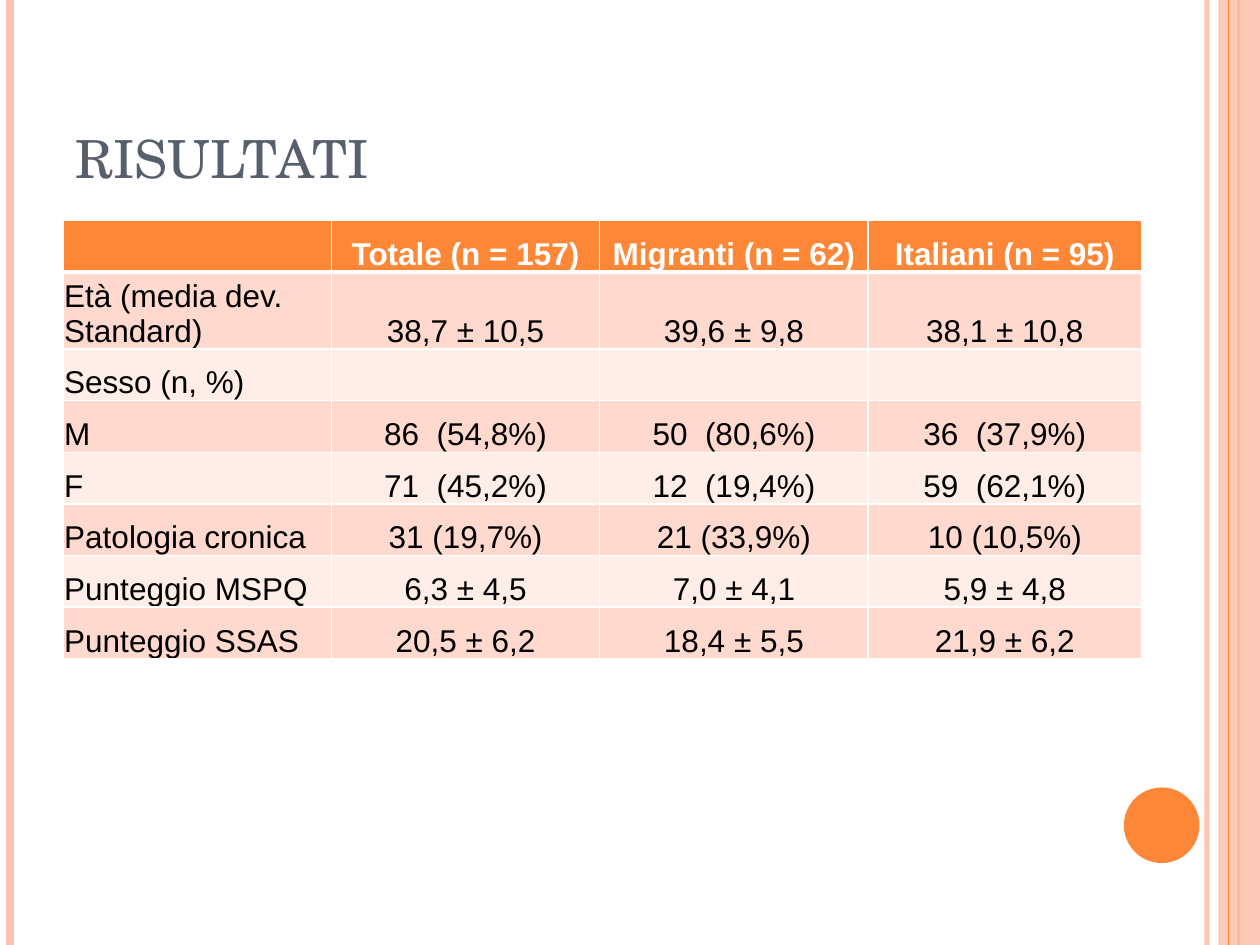
from lxml import etree
from pptx import Presentation
from pptx.dml.color import RGBColor
from pptx.enum.shapes import MSO_CONNECTOR, MSO_SHAPE
from pptx.enum.text import MSO_ANCHOR as ANCHOR, PP_ALIGN as ALIGN
from pptx.oxml.ns import qn
from pptx.util import Inches, Pt

ORANGE = RGBColor(0xFE, 0x86, 0x37)
PEACH = RGBColor(0xFE, 0xC3, 0xAE)
SLATE = RGBColor(0x57, 0x5F, 0x6D)
BAND_DARK = RGBColor(0xFF, 0xD9, 0xCE)
BAND_LIGHT = RGBColor(0xFF, 0xED, 0xE8)
WHITE = RGBColor(0xFF, 0xFF, 0xFF)
BLACK = RGBColor(0, 0, 0)

TITLE_FONT, BODY_FONT = "TeX Gyre Schola", "Arial"
WIDTH, HEIGHT = 10, 7.5
COL_WIDTHS = [2.13, 2.13, 2.13, 2.17]
ROW_HEIGHT = 0.41
ROWS = [
    ["", "Totale (n = 157)", "Migranti (n = 62)", "Italiani (n = 95)"],
    ["Età (media dev. Standard)", "38,7 ± 10,5", "39,6 ± 9,8", "38,1 ± 10,8"],
    ["Sesso (n, %)", "", "", ""],
    ["M", "86  (54,8%)", "50  (80,6%)", "36  (37,9%)"],
    ["F", "71  (45,2%)", "12  (19,4%)", "59  (62,1%)"],
    ["Patologia cronica", "31 (19,7%)", "21 (33,9%)", "10 (10,5%)"],
    ["Punteggio MSPQ", "6,3 ± 4,5", "7,0 ± 4,1", "5,9 ± 4,8"],
    ["Punteggio SSAS", "20,5 ± 6,2", "18,4 ± 5,5", "21,9 ± 6,2"],
]


def write(tf, text, font=BODY_FONT, size=18, color=BLACK, bold=False, align=ALIGN.LEFT):
    p = tf.paragraphs[0]
    p.alignment = align
    r = p.add_run()
    r.text = text
    r.font.name, r.font.size, r.font.bold = font, Pt(size), bold
    r.font.color.rgb = color


def set_opacity(sp, percent):
    for clr in sp._element.spPr.iter(qn("a:srgbClr")):
        etree.SubElement(clr, qn("a:alpha"), val=str(percent * 1000))


def set_borders(cell, color, **widths):
    """Draw cell borders; widths are points keyed by side: L, R, T, B."""
    tcPr = cell._tc.get_or_add_tcPr()
    for side, width in widths.items():
        ln = etree.SubElement(tcPr, qn(f"a:ln{side}"), w=str(Pt(width)))
        fill = etree.SubElement(ln, qn("a:solidFill"))
        etree.SubElement(fill, qn("a:srgbClr"), val=str(color))


class Deck:
    def __init__(self):
        self.prs = Presentation()
        self.prs.slide_width, self.prs.slide_height = Inches(WIDTH), Inches(HEIGHT)
        self.s = self.prs.slides.add_slide(self.prs.slide_layouts[6])

    def stripe(self, x, color, width, opacity=100):
        """Draw a vertical line over the whole slide height."""
        line = self.s.shapes.add_connector(
            MSO_CONNECTOR.STRAIGHT, Inches(x), 0, Inches(x), Inches(HEIGHT))
        line.line.color.rgb, line.line.width = color, Pt(width)
        etree.SubElement(line._element.spPr, qn("a:effectLst"))
        if opacity < 100:
            set_opacity(line, opacity)

    def shape(self, kind, x, y, w, h, color, opacity=100):
        sp = self.s.shapes.add_shape(kind, Inches(x), Inches(y), Inches(w), Inches(h))
        sp.shadow.inherit = False
        sp.fill.solid()
        sp.fill.fore_color.rgb = color
        sp.line.fill.background()
        if opacity < 100:
            set_opacity(sp, opacity)

    def title(self, text, x, y, w, h):
        tf = self.s.shapes.add_textbox(Inches(x), Inches(y), Inches(w), Inches(h)).text_frame
        tf.word_wrap = True
        tf.vertical_anchor = ANCHOR.BOTTOM
        write(tf, text, font=TITLE_FONT, size=30, color=SLATE)

    def table(self, rows, x, y):
        table = self.s.shapes.add_table(
            len(rows), len(COL_WIDTHS), Inches(x), Inches(y),
            Inches(sum(COL_WIDTHS)), Inches(ROW_HEIGHT * len(rows))).table
        for col, width in zip(table.columns, COL_WIDTHS):
            col.width = Inches(width)
        for i, values in enumerate(rows):
            table.rows[i].height = Inches(ROW_HEIGHT)
            for j, text in enumerate(values):
                self.cell(table.cell(i, j), text, i, j)

    def cell(self, cell, text, row, col):
        header = row == 0
        set_borders(cell, WHITE, L=1, R=1, T=3 if row == 1 else 1, B=3 if header else 1)
        cell.fill.solid()
        cell.fill.fore_color.rgb = ORANGE if header else BAND_DARK if row % 2 else BAND_LIGHT
        cell.vertical_anchor = ANCHOR.BOTTOM
        cell.margin_left = cell.margin_right = cell.margin_top = Inches(0.01)
        cell.margin_bottom = 0
        if text:
            write(cell.text_frame, text, color=WHITE if header else BLACK, bold=header,
                  align=ALIGN.CENTER if col else ALIGN.LEFT)


def main():
    deck = Deck()
    deck.stripe(9.58, PEACH, 3, opacity=93)
    deck.stripe(0.08, PEACH, 4.5)
    deck.stripe(9.83, ORANGE, 1.5)
    deck.shape(MSO_SHAPE.RECTANGLE, 9.67, 0, 0.33, HEIGHT, PEACH, opacity=87)
    deck.stripe(9.75, ORANGE, 0.75)
    deck.shape(MSO_SHAPE.OVAL, 8.92, 6.25, 0.6, 0.6, ORANGE)
    deck.title("RISULTATI", 0.5, 0.3, 8.17, 1.25)
    deck.table(ROWS, 0.5, 1.75)
    deck.prs.save("out.pptx")


if __name__ == "__main__":
    main()
